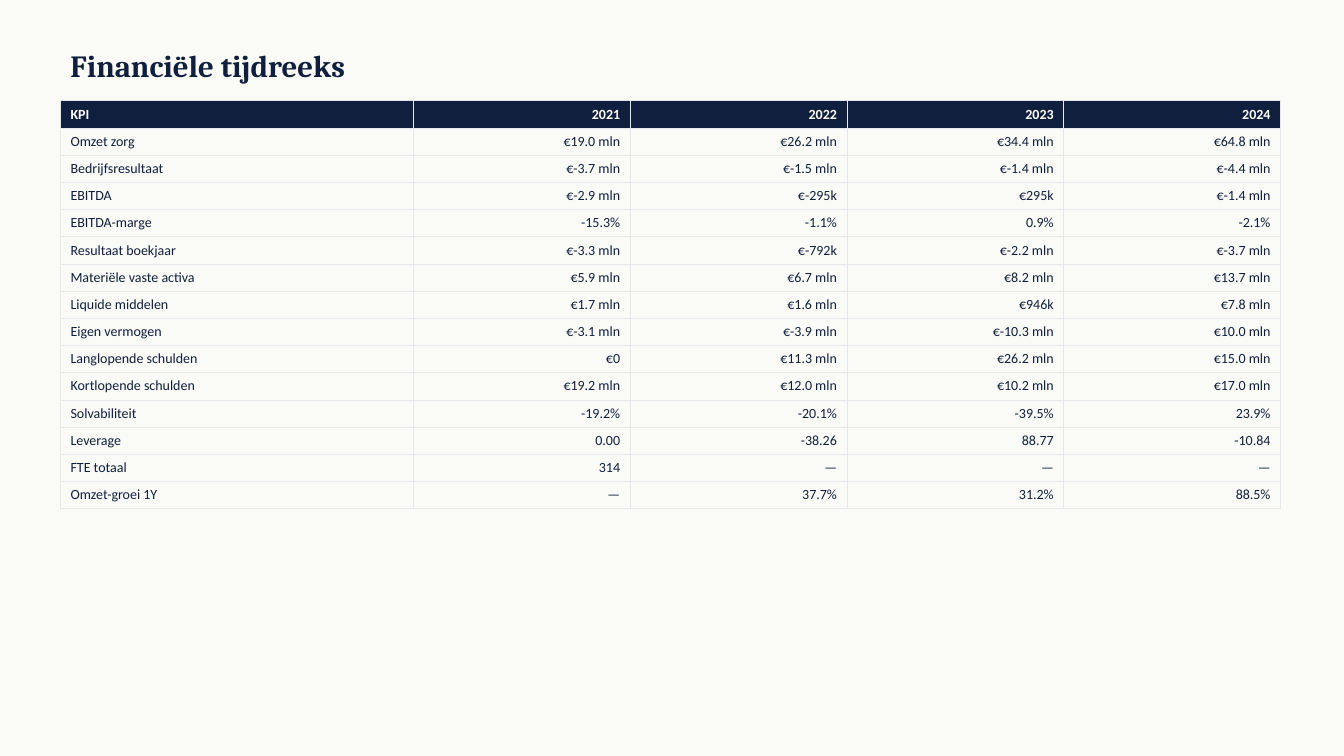
from lxml.etree import SubElement
from pptx import Presentation
from pptx.dml.color import RGBColor
from pptx.enum.text import MSO_ANCHOR as Anchor, PP_ALIGN as Align
from pptx.oxml.ns import qn
from pptx.util import Inches, Pt

NAVY, WHITE, PAPER, RULE = "0F1F3D", "FFFFFF", "FAFAF7", "E5E7EB"

KPI_ROWS = [
    ("KPI", "2021", "2022", "2023", "2024"),
    ("Omzet zorg", "€19.0 mln", "€26.2 mln", "€34.4 mln", "€64.8 mln"),
    ("Bedrijfsresultaat", "€-3.7 mln", "€-1.5 mln", "€-1.4 mln", "€-4.4 mln"),
    ("EBITDA", "€-2.9 mln", "€-295k", "€295k", "€-1.4 mln"),
    ("EBITDA-marge", "-15.3%", "-1.1%", "0.9%", "-2.1%"),
    ("Resultaat boekjaar", "€-3.3 mln", "€-792k", "€-2.2 mln", "€-3.7 mln"),
    ("Materiële vaste activa", "€5.9 mln", "€6.7 mln", "€8.2 mln", "€13.7 mln"),
    ("Liquide middelen", "€1.7 mln", "€1.6 mln", "€946k", "€7.8 mln"),
    ("Eigen vermogen", "€-3.1 mln", "€-3.9 mln", "€-10.3 mln", "€10.0 mln"),
    ("Langlopende schulden", "€0", "€11.3 mln", "€26.2 mln", "€15.0 mln"),
    ("Kortlopende schulden", "€19.2 mln", "€12.0 mln", "€10.2 mln", "€17.0 mln"),
    ("Solvabiliteit", "-19.2%", "-20.1%", "-39.5%", "23.9%"),
    ("Leverage", "0.00", "-38.26", "88.77", "-10.84"),
    ("FTE totaal", "314", "—", "—", "—"),
    ("Omzet-groei 1Y", "—", "37.7%", "31.2%", "88.5%"),
]
COL_WIDTHS = [3.5] + [2.15] * 4
ROW_HEIGHT = 0.27


def rgb(value):
    return RGBColor.from_string(value)


def write(tf, text, *, size=10, font="Calibri", color=NAVY, bold=False, align=Align.LEFT):
    p = tf.paragraphs[0]
    p.alignment = align
    r = p.add_run()
    r.text = text
    r.font.size, r.font.name, r.font.bold = Pt(size), font, bold
    r.font.color.rgb = rgb(color)


def set_borders(cell, color, width):
    """Draw a solid line on all four sides of a cell; call before setting its fill."""
    tc_pr = cell._tc.get_or_add_tcPr()
    for side in ("lnL", "lnR", "lnT", "lnB"):
        ln = SubElement(tc_pr, qn(f"a:{side}"), w=str(Pt(width)))
        fill = SubElement(ln, qn("a:solidFill"))
        SubElement(fill, qn("a:srgbClr"), val=color)


class SlideBuilder:
    def __init__(self, prs):
        self.s = prs.slides.add_slide(prs.slide_layouts[6])
        self.s.background.fill.solid()
        self.s.background.fill.fore_color.rgb = rgb(PAPER)

    def title(self, text, left, top, width, height):
        sp = self.s.shapes.add_textbox(Inches(left), Inches(top), Inches(width), Inches(height))
        tf = sp.text_frame
        tf.word_wrap = True
        tf.vertical_anchor = Anchor.MIDDLE
        write(tf, text, size=22, font="Cambria", bold=True)

    def table(self, rows, col_widths, left, top):
        frame = self.s.shapes.add_table(
            len(rows), len(col_widths), Inches(left), Inches(top),
            Inches(sum(col_widths)), Inches(ROW_HEIGHT * len(rows)))
        table = frame.table
        table.horz_banding = False
        for col, width in zip(table.columns, col_widths):
            col.width = Inches(width)
        for i, row in enumerate(rows):
            table.rows[i].height = Inches(ROW_HEIGHT)
            for j, text in enumerate(row):
                self.cell(table.cell(i, j), text, header=i == 0, numeric=j > 0)

    def cell(self, cell, text, header, numeric):
        set_borders(cell, RULE, 0.5)
        if header:
            cell.fill.solid()
            cell.fill.fore_color.rgb = rgb(NAVY)
        else:
            cell.fill.background()
        write(cell.text_frame, text, color=WHITE if header else NAVY, bold=header,
              align=Align.RIGHT if numeric else Align.LEFT)


def main():
    prs = Presentation()
    prs.slide_width, prs.slide_height = Inches(13.33), Inches(7.5)
    slide = SlideBuilder(prs)
    slide.title("Financiële tijdreeks", 0.6, 0.4, 12, 0.5)
    slide.table(KPI_ROWS, COL_WIDTHS, 0.6, 1)
    prs.save("out.pptx")


if __name__ == "__main__":
    main()
